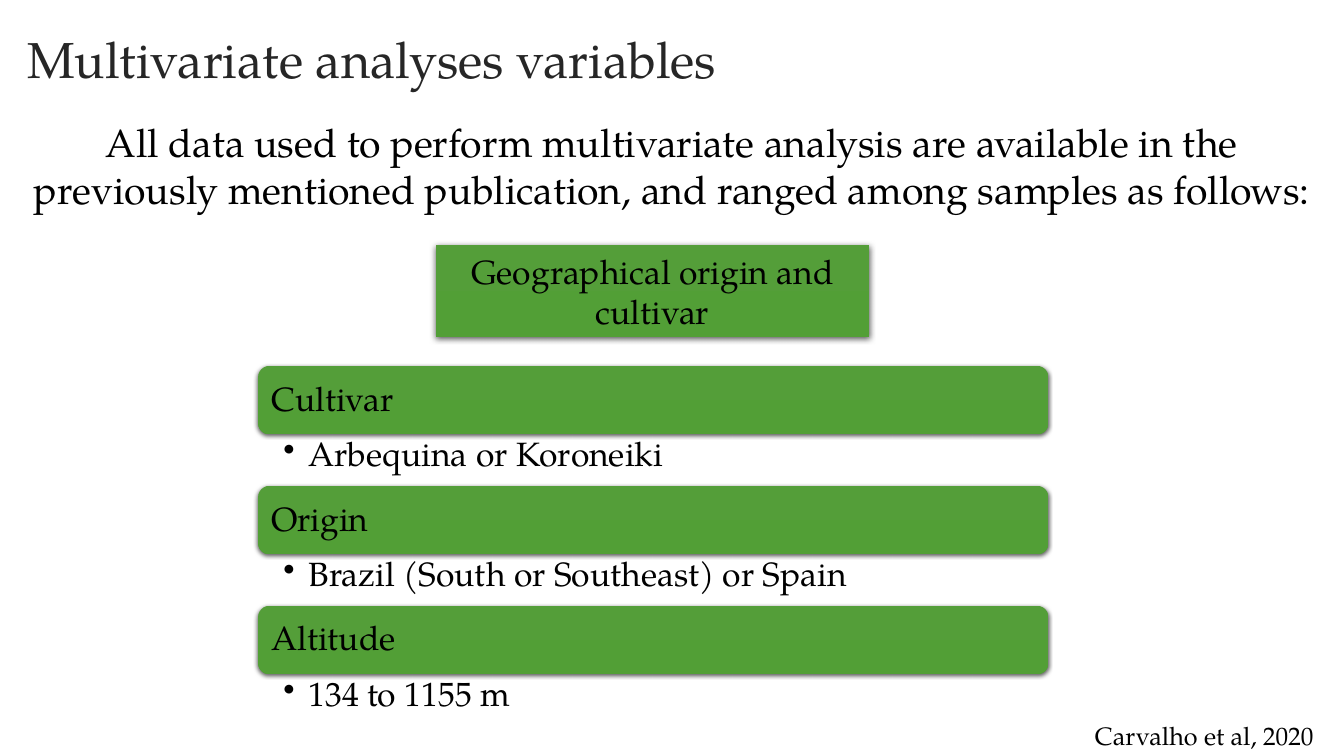
from lxml.etree import SubElement
from pptx import Presentation
from pptx.dml.color import RGBColor
from pptx.enum.shapes import MSO_SHAPE as SHAPE
from pptx.enum.text import MSO_ANCHOR as ANCHOR, PP_ALIGN as ALIGN
from pptx.oxml.ns import qn
from pptx.util import Pt

PX = 9144
FONT = "TeX Gyre Pagella"
COLORS = {"text": "000000", "title": "262626",
          "green_top": "549E39", "green_bottom": "529F36"}
VARIABLES = [
    ("Cultivar", "Arbequina or Koroneiki"),
    ("Origin", "Brazil (South or Southeast) or Spain"),
    ("Altitude", "134 to 1155 m"),
]


def emu(*lengths):
    """Turn px lengths into EMU."""
    return [n * PX for n in lengths]


def rgb(name):
    """Look up a named colour."""
    return RGBColor.from_string(COLORS[name])


def write(s, text, size, align=ALIGN.LEFT, anchor=ANCHOR.TOP,
          insets=(10, 5, 10, 5), spacing=None, color="text"):
    """Fill a shape with one formatted paragraph and return it."""
    tf = s.text_frame
    tf.word_wrap = True
    tf.vertical_anchor = anchor
    tf.margin_left, tf.margin_top, tf.margin_right, tf.margin_bottom = emu(*insets)
    p = tf.paragraphs[0]
    p.alignment = align
    p.line_spacing = spacing
    r = p.add_run()
    r.text = text
    r.font.name, r.font.size = FONT, Pt(size)
    r.font.color.rgb = rgb(color)
    return p


def add_text(slide, box, text, size, **style):
    """Add a text box and return its paragraph."""
    return write(slide.shapes.add_textbox(*emu(*box)), text, size, **style)


def add_green(slide, kind, box, blur, dist):
    """Add a green gradient shape with a soft shadow below."""
    s = slide.shapes.add_shape(kind, *emu(*box))
    s.fill.gradient()
    s.fill.gradient_angle = 270
    for stop, name in zip(s.fill.gradient_stops, ("green_top", "green_bottom")):
        stop.color.rgb = rgb(name)
    s.line.fill.background()
    s.shadow.inherit = False
    effects = s._element.spPr.find(qn("a:effectLst"))
    shadow = SubElement(effects, qn("a:outerShdw"), blurRad=str(Pt(blur)),
                        dist=str(Pt(dist)), dir="5400000",
                        algn="ctr", rotWithShape="0")
    black = SubElement(shadow, qn("a:srgbClr"), val=COLORS["text"])
    SubElement(black, qn("a:alpha"), val="63000")
    return s


def add_title(slide, box, text):
    """Place and format the title placeholder."""
    s = slide.shapes.title
    s.left, s.top, s.width, s.height = emu(*box)
    write(s, text, 36, anchor=ANCHOR.MIDDLE, spacing=0.9, color="title")


def add_heading(slide, box, text):
    """Add the green heading above the list."""
    s = add_green(slide, SHAPE.RECTANGLE, box, 4.5, 1.5)
    write(s, text, 24, align=ALIGN.CENTER, anchor=ANCHOR.MIDDLE)


def add_bullet(slide, box, text):
    """Add a one-item bulleted text."""
    p = add_text(slide, box, text, 24, insets=(25, 3, 19, 3), spacing=0.9)
    p.level = 1
    pPr = p._p.get_or_add_pPr()
    pPr.set("marL", str(25 * PX))
    pPr.set("indent", str(-25 * PX))
    SubElement(pPr, qn("a:buChar"), char="•")


def add_variables(slide, box, variables):
    """Stack a green bar and a bullet for each variable."""
    x, y, w, h = box
    step = h // len(variables)
    bar = 68
    for i, (name, values) in enumerate(variables):
        top = y + i * step
        s = add_green(slide, SHAPE.ROUNDED_RECTANGLE, (x, top, w, bar), 3, 1)
        write(s, name, 24, anchor=ANCHOR.MIDDLE, insets=(10, 10, 10, 10),
              spacing=0.9)
        add_bullet(slide, (x, top + bar, w, step - bar), values)


def main():
    """Build and save the slide."""
    prs = Presentation()
    prs.slide_width, prs.slide_height = emu(1333, 750)
    slide = prs.slides.add_slide(prs.slide_layouts[5])
    add_text(slide, (1056, 710, 277, 40), "Carvalho et al, 2020", 18,
             align=ALIGN.CENTER)
    add_title(slide, (17, 25, 1261, 74), "Multivariate analyses variables")
    add_text(slide, (8, 112, 1316, 104),
             "All data used to perform multivariate analysis are available in "
             "the previously mentioned publication, and ranged among samples "
             "as follows:", 28, align=ALIGN.CENTER)
    add_variables(slide, (256, 363, 784, 357), VARIABLES)
    add_heading(slide, (432, 243, 430, 91), "Geographical origin and cultivar")
    prs.save("out.pptx")


if __name__ == "__main__":
    main()
